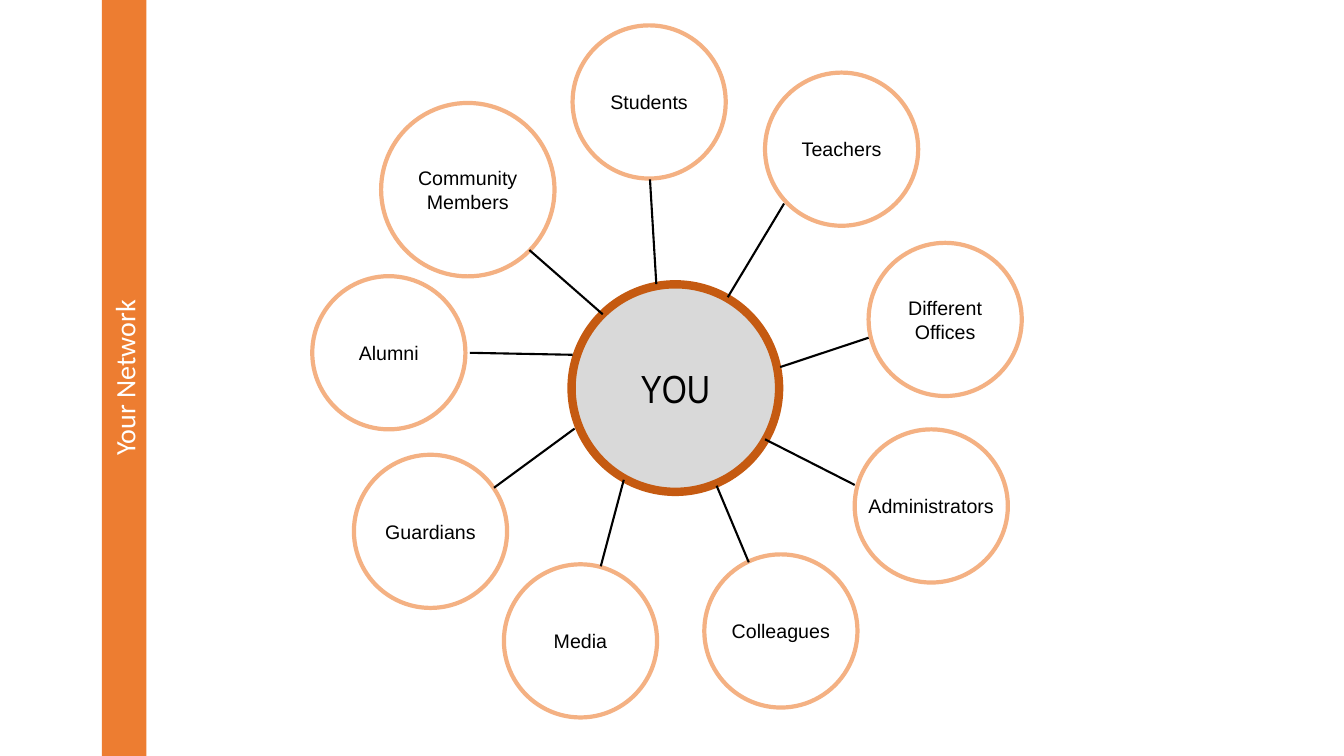
from pptx import Presentation
from pptx.dml.color import RGBColor
from pptx.enum.shapes import MSO_CONNECTOR as Link, MSO_SHAPE as Shape
from pptx.enum.text import MSO_ANCHOR as Anchor, MSO_AUTO_SIZE as Fit, PP_ALIGN as Align
from pptx.oxml.ns import qn
from pptx.util import Cm, Pt
from lxml.etree import SubElement

BLACK = RGBColor(0x00, 0x00, 0x00)
WHITE = RGBColor(0xFF, 0xFF, 0xFF)
GREY = RGBColor(0xD9, 0xD9, 0xD9)
ORANGE = RGBColor(0xED, 0x7D, 0x31)
RUST = RGBColor(0xC5, 0x5A, 0x11)
PEACH = RGBColor(0xF4, 0xB1, 0x83)

WIDTH, HEIGHT = 33.87, 19.05
HUB, NODE = 5.23, 3.86

PEOPLE = [
    ("Students", NODE, (-0.66, -7.21), (-0.64, -5.26), (-0.48, -2.62)),
    ("Teachers", NODE, (4.19, -6.02), (2.74, -4.65), (1.32, -2.29)),
    ("Different\nOffices", NODE, (6.8, -1.73), (4.87, -1.27), (2.64, -0.53)),
    ("Administrators", NODE, (6.45, 2.97), (4.52, 2.44), (2.26, 1.29)),
    ("Colleagues", NODE, (2.66, 6.12), (1.85, 4.39), (1.04, 2.46)),
    ("Media", NODE, (-2.39, 6.37), (-1.88, 4.49), (-1.3, 2.31)),
    ("Guardians", NODE, (-6.17, 3.61), (-4.57, 2.51), (-2.54, 1.02)),
    ("Alumni", NODE, (-7.22, -0.89), (-5.18, -0.89), (-2.59, -0.84)),
    ("Community\nMembers", 4.37, (-5.23, -5), (-3.68, -3.48), (-1.83, -1.86)),
]


def write(shape, text, font, size, color):
    frame = shape.text_frame
    frame.text = text
    frame.auto_size = Fit.NONE
    frame.word_wrap = False
    frame.vertical_anchor = Anchor.MIDDLE
    for para in frame.paragraphs:
        para.alignment = Align.CENTER
        for run in para.runs:
            run.font.name = font
            run.font.size = Pt(size)
            run.font.color.rgb = color


def add_band(slide, left, top, width, height):
    band = slide.shapes.title
    band.left = Cm(left + (width - height) / 2)
    band.top = Cm(top + (height - width) / 2)
    band.width, band.height = Cm(height), Cm(width)
    band.rotation = 270
    band.fill.solid()
    band.fill.fore_color.rgb = ORANGE
    write(band, "Your Network", "Calibri", 20, WHITE)


def add_disc(slide, x, y, size, fill, edge, weight):
    disc = slide.shapes.add_shape(
        Shape.OVAL, Cm(x - size / 2), Cm(y - size / 2), Cm(size), Cm(size))
    disc.shadow.inherit = False
    disc.fill.solid()
    disc.fill.fore_color.rgb = fill
    disc.line.color.rgb = edge
    disc.line.width = Pt(weight)
    return disc


def add_link(slide, x, y, start, end):
    points = [Cm(v) for v in (x + start[0], y + start[1], x + end[0], y + end[1])]
    link = slide.shapes.add_connector(Link.STRAIGHT, *points)
    link.line.color.rgb = BLACK
    link.line.width = Pt(1.5)
    SubElement(link.element.spPr, qn("a:effectLst"))


def add_network(slide, left, top, width, height):
    x, y = left + width / 2, top + height / 2
    hub = add_disc(slide, x, y, HUB, GREY, RUST, 6)
    write(hub, "YOU", "Arial Narrow", 28, BLACK)
    for name, size, (dx, dy), start, end in PEOPLE:
        node = add_disc(slide, x + dx, y + dy, size, WHITE, PEACH, 3)
        write(node, name, "Arial", 14, BLACK)
        add_link(slide, x, y, start, end)


def main():
    deck = Presentation()
    deck.slide_width, deck.slide_height = Cm(WIDTH), Cm(HEIGHT)
    slide = deck.slides.add_slide(deck.slide_layouts[5])
    add_band(slide, 2.57, 0, 1.12, HEIGHT)
    add_network(slide, 7.87, 0.64, 18.3, 18.28)
    deck.save("out.pptx")


if __name__ == "__main__":
    main()
